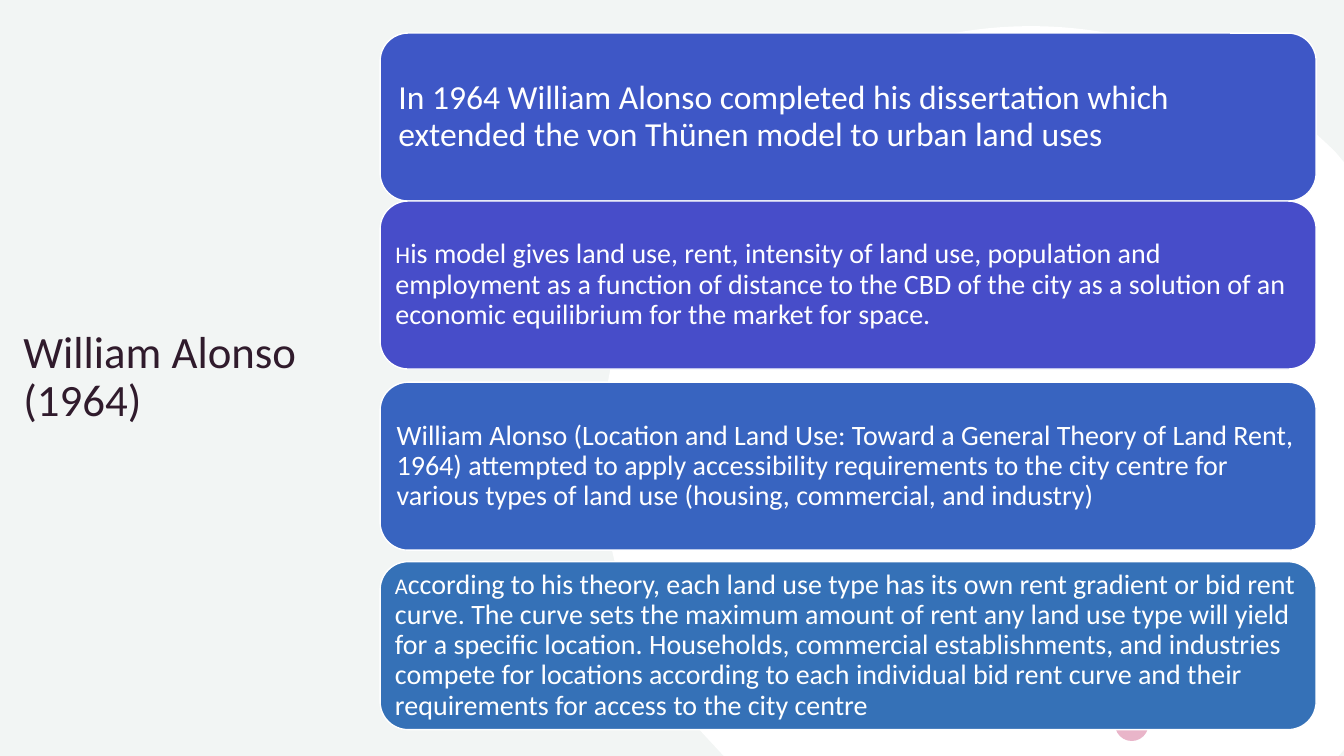
from lxml.etree import SubElement
from pptx import Presentation
from pptx.dml.color import RGBColor
from pptx.enum.shapes import MSO_SHAPE as Shape
from pptx.enum.text import MSO_ANCHOR as Anchor, MSO_AUTO_SIZE as AutoSize, PP_ALIGN as Align
from pptx.oxml.ns import qn
from pptx.util import Pt

WIDTH, HEIGHT = 960, 540
WHITE = RGBColor(0xFF, 0xFF, 0xFF)
SAGE = RGBColor(0xD5, 0xDE, 0xDB)
PLUM = RGBColor(0x30, 0x1B, 0x2C)
PINK = RGBColor(0xE9, 0xB5, 0xC9)
ROYAL = RGBColor(0x3E, 0x57, 0xC6)
INDIGO = RGBColor(0x47, 0x4D, 0xC9)
BLUE = RGBColor(0x38, 0x64, 0xC0)
STEEL = RGBColor(0x35, 0x71, 0xB7)

CARD_LEFT, CARD_WIDTH, CARD_HEIGHT = 271.5, 668.6, 120

# Disc cut off by the slide edges: two points make a line, six a curve
DISC_START = (736.5, 18.7)
DISC_SEGMENTS = [
    [(821.5, 18.7), (898, 53.3), (954, 108.7)],
    [(960, 115.9)],
    [(960, 535.7)],
    [(956.2, 540)],
    [(517, 540)],
    [(499.7, 521.3)],
    [(455.8, 468), (429.8, 399.6), (429.8, 325.4)],
    [(429.8, 156.2), (567.4, 18.7), DISC_START],
]

# Top, fill and (text, size) runs of each card
CARDS = [
    (23.6, ROYAL, [
        ("In 1964 William Alonso completed his dissertation which extended "
         "the von Thünen model to urban land uses", 24)]),
    (143.6, INDIGO, [
        ("H", 17),
        ("is model gives land use, rent, intensity of land use, population and "
         "employment as a function of distance to the CBD of the city as a "
         "solution of an economic equilibrium for the market for space.", 20)]),
    (273, BLUE, [
        ("William Alonso (Location and Land Use: Toward a General Theory of "
         "Land Rent, 1964) attempted to apply accessibility requirements to the "
         "city centre for various types of land use (housing, commercial, and "
         "industry)", 20)]),
    (401.2, STEEL, [
        ("A", 16),
        ("ccording to his theory, each land use type has its own rent gradient "
         "or bid rent curve. The curve sets the maximum amount of rent any land "
         "use type will yield for a specific location. Households, commercial "
         "establishments, and industries compete for locations according to "
         "each individual bid rent curve and their requirements for access to "
         "the city centre", 20)]),
]


class SlideBuilder:
    font = "Calibri"
    line_spacing = 0.9

    def __init__(self, slide):
        self.slide = slide

    def paint(self, shape, color):
        shape.shadow.inherit = False
        shape.fill.solid()
        shape.fill.fore_color.rgb = color
        shape.line.fill.background()

    def add_shape(self, kind, left, top, width, height, color):
        shape = self.slide.shapes.add_shape(
            kind, Pt(left), Pt(top), Pt(width), Pt(height))
        self.paint(shape, color)
        return shape

    def tint(self, color, percent):
        """Lay a translucent colour over the whole slide, behind the title."""
        tint = self.add_shape(Shape.RECTANGLE, 0, 0, WIDTH, HEIGHT, color)
        rgb = tint.fill._xPr.find(f"{qn('a:solidFill')}/{qn('a:srgbClr')}")
        SubElement(rgb, qn("a:alpha"), val=str(percent * 1000))
        self.slide.shapes.title.element.addprevious(tint.element)

    def format_paragraph(self, paragraph):
        paragraph.alignment = Align.LEFT
        paragraph.line_spacing = self.line_spacing

    def add_run(self, paragraph, text, size, color):
        run = paragraph.add_run()
        run.text = text
        run.font.name = self.font
        run.font.size = Pt(size)
        run.font.color.rgb = color

    def title(self, lines, left, top, width, height):
        title = self.slide.shapes.title
        title.left, title.top = Pt(left), Pt(top)
        title.width, title.height = Pt(width), Pt(height)
        frame = title.text_frame
        frame.word_wrap = True
        frame.auto_size = AutoSize.NONE
        frame.vertical_anchor = Anchor.MIDDLE
        paragraph = frame.paragraphs[0]
        self.format_paragraph(paragraph)
        for index, line in enumerate(lines):
            if index:
                paragraph.add_line_break()
            self.add_run(paragraph, line, 32, PLUM)

    def curved_outline(self, start, segments, color):
        """Draw a freeform, turning each three-point segment into a Bézier."""
        builder = self.slide.shapes.build_freeform(*map(Pt, start))
        points = [(Pt(x), Pt(y)) for segment in segments for x, y in segment]
        builder.add_line_segments(points, close=True)
        shape = builder.convert_to_shape()
        self.paint(shape, color)
        lines = iter(list(shape.element.iter(qn("a:lnTo"))))
        for segment in segments:
            parts = [next(lines) for _ in segment]
            if len(parts) == 3:
                first = parts[0]
                first.tag = qn("a:cubicBezTo")
                for part in parts[1:]:
                    first.append(part[0])
                    part.getparent().remove(part)

    def card(self, top, color, runs):
        card = self.add_shape(Shape.ROUNDED_RECTANGLE, CARD_LEFT, top,
                              CARD_WIDTH, CARD_HEIGHT, color)
        card.line.color.rgb = WHITE
        card.line.width = Pt(1)
        frame = card.text_frame
        frame.word_wrap = True
        frame.vertical_anchor = Anchor.MIDDLE
        inset = Pt(0.3 * runs[0][1])
        frame.margin_left = frame.margin_right = inset
        frame.margin_top = frame.margin_bottom = inset
        paragraph = frame.paragraphs[0]
        self.format_paragraph(paragraph)
        for text, size in runs:
            self.add_run(paragraph, text, size, WHITE)


def main():
    presentation = Presentation()
    presentation.slide_width, presentation.slide_height = Pt(WIDTH), Pt(HEIGHT)
    title_only = presentation.slide_layouts[5]
    builder = SlideBuilder(presentation.slides.add_slide(title_only))
    builder.tint(SAGE, 30)
    builder.title(["William Alonso ", "(1964)"], 9.5, 67, 363, 406)
    builder.curved_outline(DISC_START, DISC_SEGMENTS, WHITE)
    builder.add_shape(Shape.OVAL, 796.5, 505.5, 23.8, 23.8, PINK)
    for top, color, runs in CARDS:
        builder.card(top, color, runs)
    presentation.save("out.pptx")


if __name__ == "__main__":
    main()
